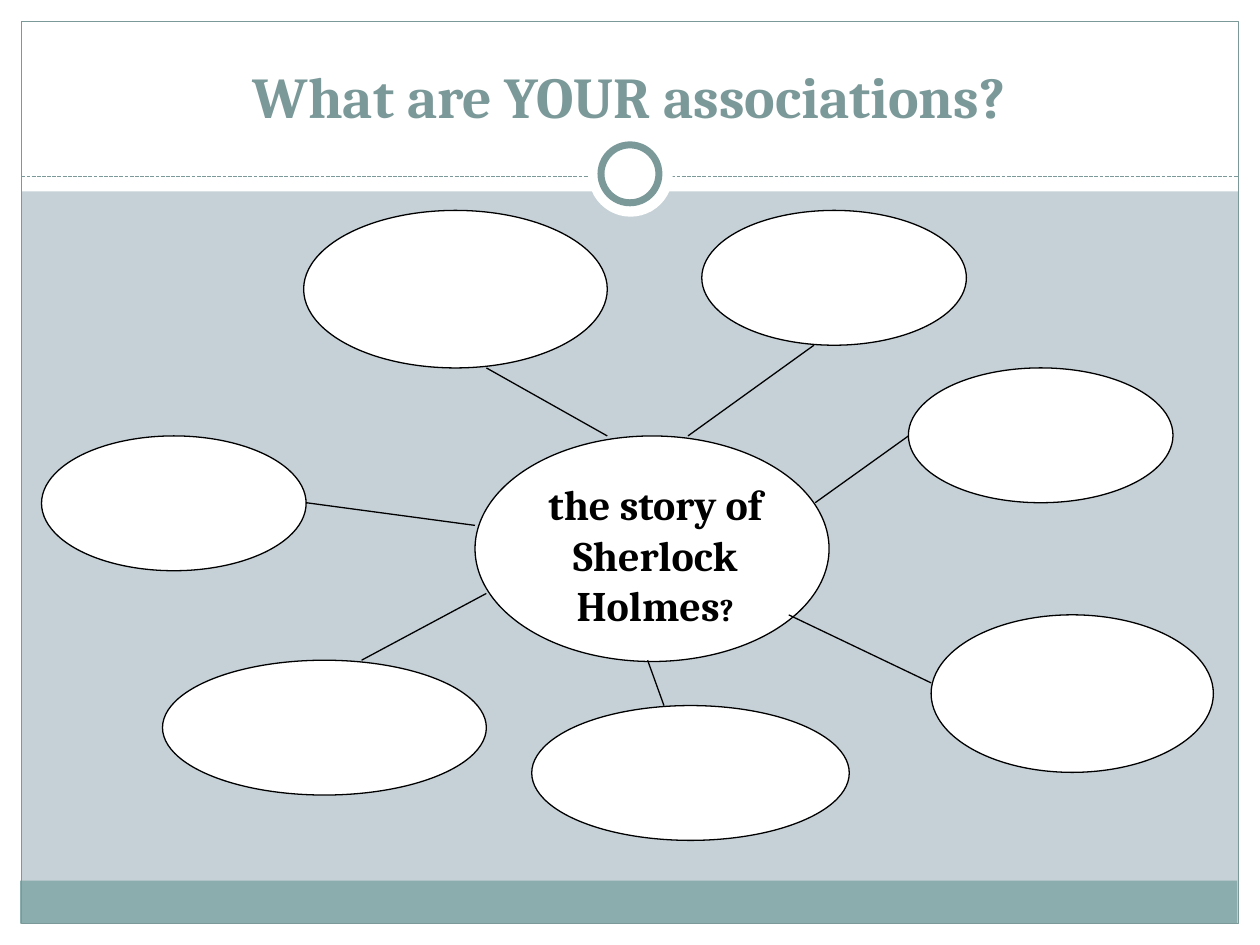
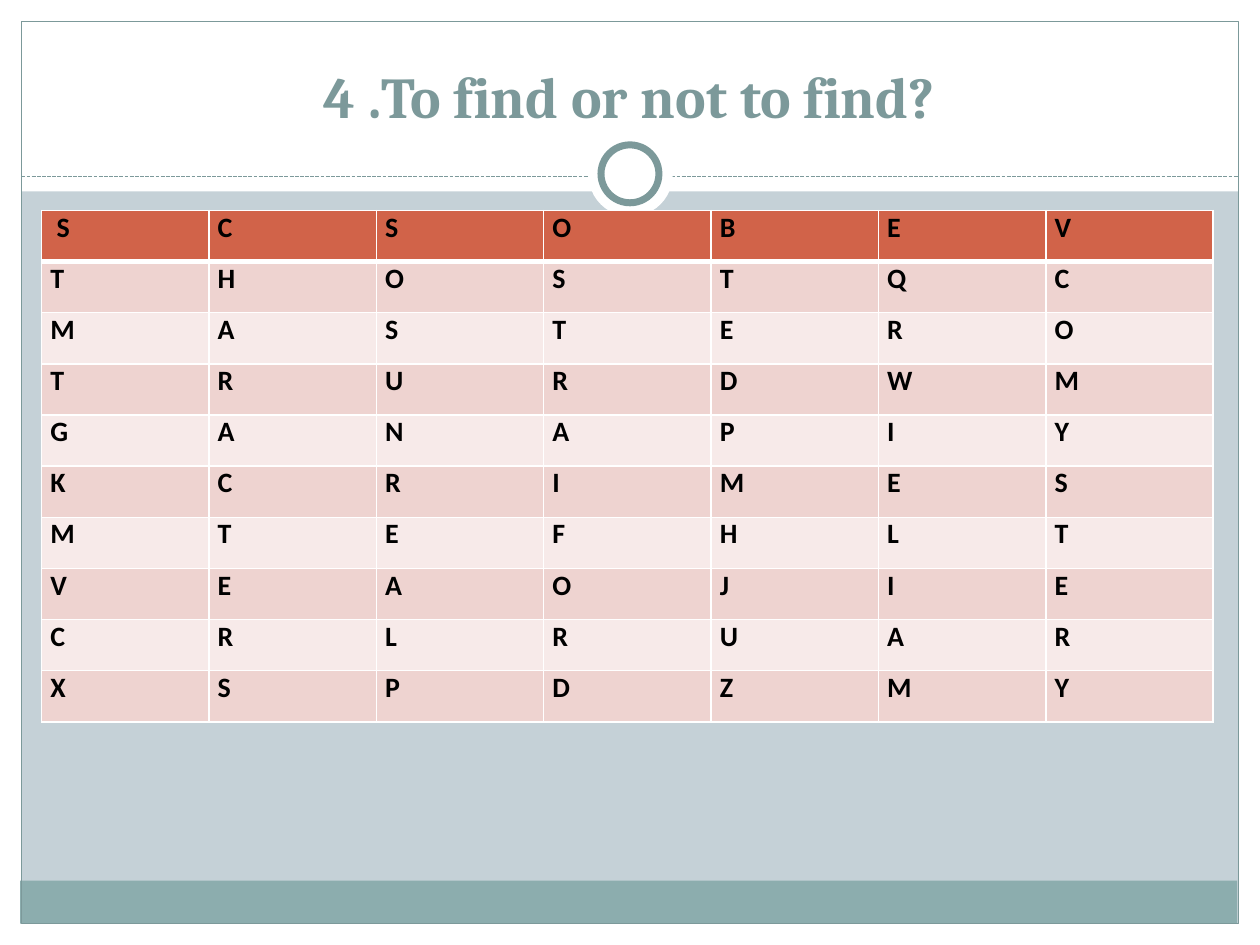
from dataclasses import dataclass

from lxml import etree
from pptx import Presentation
from pptx.dml.color import RGBColor
from pptx.enum.dml import MSO_LINE
from pptx.enum.shapes import MSO_CONNECTOR, MSO_SHAPE
from pptx.enum.text import MSO_ANCHOR, PP_ALIGN
from pptx.oxml.ns import qn
from pptx.util import Inches, Pt

RECT, OVAL = MSO_SHAPE.RECTANGLE, MSO_SHAPE.OVAL
STRAIGHT, DASH = MSO_CONNECTOR.STRAIGHT, MSO_LINE.SQUARE_DOT
TOP, BOTTOM, CENTER = MSO_ANCHOR.TOP, MSO_ANCHOR.BOTTOM, PP_ALIGN.CENTER

COLORS = {
    "page": "C5D1D7", "white": "FFFFFF", "black": "000000", "accent": "7C999A",
    "footer": "8CADAE", "header": "D16349", "odd": "EED3D0", "even": "F7EAE9",
}
HEADING_FONT, BODY_FONT = "Cambria", "Calibri"
THIN = 0.75


@dataclass
class Box:
    left: float
    top: float
    width: float
    height: float
    shape: int = OVAL
    fill: str | None = "white"
    line: str | None = None
    weight: float = THIN


@dataclass
class Link:
    x1: float
    y1: float
    x2: float
    y2: float
    color: str = "black"
    dash: int | None = None


# Frame shared by both slides
BANDS = [
    Box(0, 7.33, 10, 0.17, RECT),
    Box(0, 0, 10, 1.52, RECT),
    Box(0, 0, 0.17, 7.5, RECT),
    Box(9.83, 0, 0.17, 7.5, RECT),
    Box(0.16, 6.99, 9.66, 0.34, RECT, "footer"),
    Box(0.17, 0.17, 9.66, 7.16, RECT, None, "accent"),
]
DIVIDER = Link(0.17, 1.4, 9.83, 1.4, "accent", DASH)
RING = [
    Box(4.67, 1.05, 0.67, 0.67),
    Box(4.77, 1.15, 0.46, 0.46, line="accent", weight=4),
]

# Mind map: the hub first, then the empty bubbles
BUBBLES = [
    Box(*at, line="black") for at in (
        (3.77, 3.46, 2.81, 1.79),
        (0.33, 3.46, 2.1, 1.07),
        (7.21, 2.92, 2.1, 1.07),
        (4.22, 5.6, 2.52, 1.07),
        (1.29, 5.24, 2.57, 1.07),
        (7.39, 4.88, 2.24, 1.25),
        (2.41, 1.67, 2.41, 1.25),
        (5.57, 1.67, 2.1, 1.07),
    )
]
SPOKES = [
    Link(2.43, 3.99, 3.77, 4.17),
    Link(3.86, 2.92, 4.82, 3.46),
    Link(6.47, 3.99, 7.21, 3.46),
    Link(2.87, 5.24, 3.86, 4.71),
    Link(6.26, 4.88, 7.39, 5.42),
    Link(5.46, 3.46, 6.46, 2.74),
    Link(5.27, 5.6, 5.14, 5.24),
]

# Word search, one string per row
LETTERS = ["SCSOBEV", "THOSTQC", "MASTERO", "TRURDWM", "GANAPIY",
           "KCRIMES", "MTEFHLT", "VEAOJIE", "CRLRUAR", "XSPDZMY"]


def rgb(name: str) -> RGBColor:
    return RGBColor.from_string(COLORS[name])


def add_box(s, box: Box) -> None:
    sp = s.shapes.add_shape(box.shape, Inches(box.left), Inches(box.top),
                            Inches(box.width), Inches(box.height))
    sp.shadow.inherit = False
    if box.fill:
        sp.fill.solid()
        sp.fill.fore_color.rgb = rgb(box.fill)
    else:
        sp.fill.background()
    if box.line:
        sp.line.color.rgb = rgb(box.line)
        sp.line.width = Pt(box.weight)
    else:
        sp.line.fill.background()


def add_link(s, link: Link) -> None:
    cx = s.shapes.add_connector(STRAIGHT, Inches(link.x1), Inches(link.y1),
                                Inches(link.x2), Inches(link.y2))
    cx.line.color.rgb = rgb(link.color)
    cx.line.width = Pt(THIN)
    if link.dash:
        cx.line.dash_style = link.dash
    etree.SubElement(cx._element.spPr, qn("a:effectLst"))


def style_font(font, name: str, size: float, color: str) -> None:
    font.name, font.size, font.bold = name, Pt(size), True
    font.color.rgb = rgb(color)


def add_heading(s, text: str, at: tuple[float, ...], size: float, color: str, anchor=TOP):
    tf = s.shapes.add_textbox(*map(Inches, at)).text_frame
    tf.word_wrap = True
    tf.vertical_anchor = anchor
    p = tf.paragraphs[0]
    p.alignment = CENTER
    style_font(p.font, HEADING_FONT, size, color)
    p.add_run().text = text
    return p


def add_slide(prs, title: str):
    s = prs.slides.add_slide(prs.slide_layouts[6])
    s.background.fill.solid()
    s.background.fill.fore_color.rgb = rgb("page")
    for band in BANDS:
        add_box(s, band)
    add_link(s, DIVIDER)
    for circle in RING:
        add_box(s, circle)
    add_heading(s, title, (0.33, 0.25, 9.33, 0.83), 33, "accent", BOTTOM)
    return s


def set_borders(cell, bottom: float, top: float) -> None:
    """White borders; the line elements must come before the fill."""
    widths = {"a:lnL": 1, "a:lnR": 1, "a:lnT": top, "a:lnB": bottom}
    tc_pr = cell._tc.get_or_add_tcPr()
    for i, (tag, width) in enumerate(widths.items()):
        ln = etree.Element(qn(tag), w=str(Pt(width)))
        fill = etree.SubElement(ln, qn("a:solidFill"))
        etree.SubElement(fill, qn("a:srgbClr"), val=COLORS["white"])
        tc_pr.insert(i, ln)


def add_letter_table(s) -> None:
    rows, cols = len(LETTERS), len(LETTERS[0])
    table = s.shapes.add_table(rows, cols, Inches(0.33), Inches(1.67),
                               Inches(9.3), Inches(4.06)).table
    table.first_row = table.horz_banding = False
    for r, word in enumerate(LETTERS):
        for c, letter in enumerate(word):
            cell = table.cell(r, c)
            cell.text = " " + letter if r == c == 0 else letter
            cell.margin_left = cell.margin_right = Inches(0.07)
            cell.margin_top = cell.margin_bottom = 0
            style_font(cell.text_frame.paragraphs[0].font, BODY_FONT, 16, "black")
            cell.fill.solid()
            cell.fill.fore_color.rgb = rgb("header" if r == 0 else "odd" if r % 2 else "even")
            set_borders(cell, bottom=3 if r == 0 else 1, top=3 if r == 1 else 1)


def main() -> None:
    prs = Presentation()
    prs.slide_width, prs.slide_height = Inches(10), Inches(7.5)

    # Slide 1: associations
    s = add_slide(prs, "What are YOUR associations?")
    for bubble in BUBBLES:
        add_box(s, bubble)
    for spoke in SPOKES:
        add_link(s, spoke)
    p = add_heading(s, "the story of Sherlock Holmes", (3.91, 3.75, 2.58, 1.31), 24, "black")
    r = p.add_run()
    r.text = "?"
    r.font.size = Pt(18)

    # Slide 2: word search
    add_letter_table(add_slide(prs, "4 .To find or not to find?"))

    prs.save("out.pptx")


if __name__ == "__main__":
    main()
